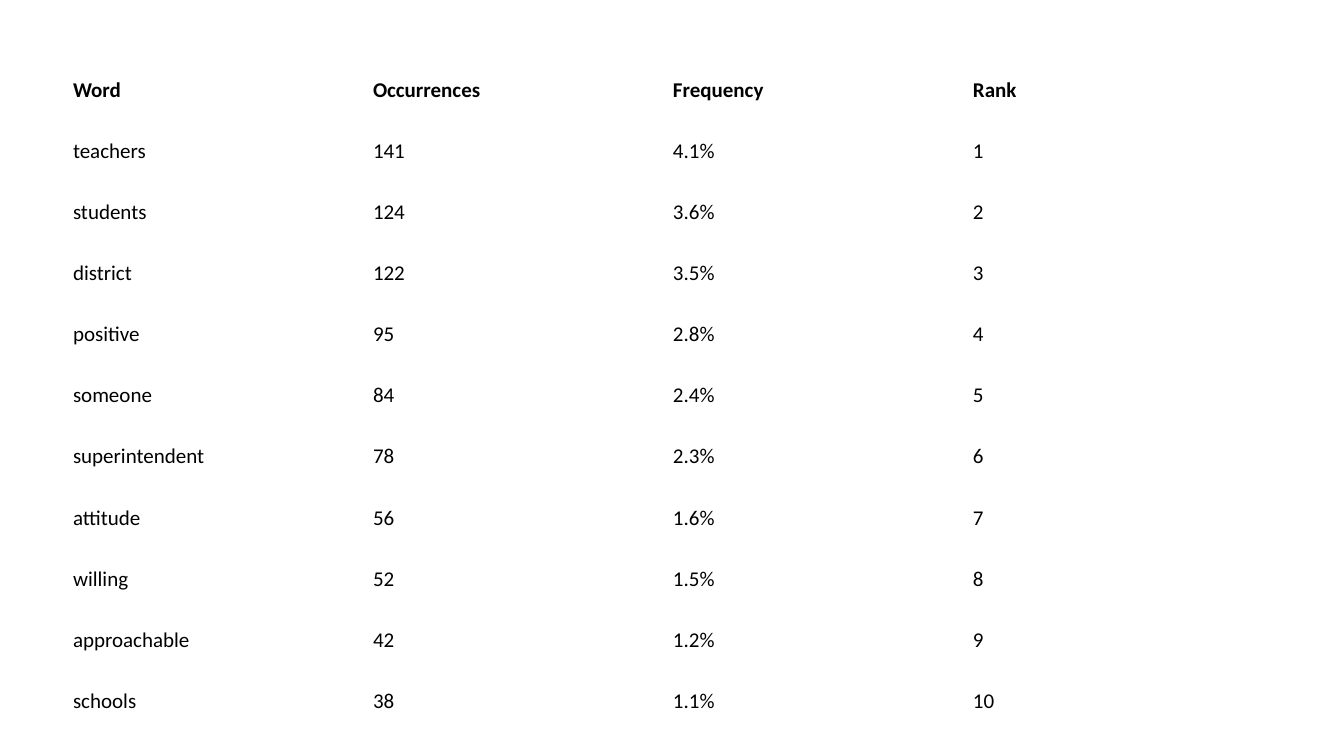
from typing import NamedTuple

import pptx
import pptx.dml.color
import pptx.enum.text
import pptx.table
import pptx.util
from pptx.util import Cm

COL_WIDTH = Cm(7.56)
ROW_HEIGHT = Cm(1.54)
INSET = Cm(0.24)
HEADERS = ("Word", "Occurrences", "Frequency", "Rank")


class WordCount(NamedTuple):
    word: str
    occurrences: int
    frequency: str


WORD_COUNTS = [
    WordCount("teachers", 141, "4.1%"),
    WordCount("students", 124, "3.6%"),
    WordCount("district", 122, "3.5%"),
    WordCount("positive", 95, "2.8%"),
    WordCount("someone", 84, "2.4%"),
    WordCount("superintendent", 78, "2.3%"),
    WordCount("attitude", 56, "1.6%"),
    WordCount("willing", 52, "1.5%"),
    WordCount("approachable", 42, "1.2%"),
    WordCount("schools", 38, "1.1%"),
]

CELL_FORMAT = {
    "vertical_anchor": pptx.enum.text.MSO_ANCHOR.MIDDLE,
    "margin_left": INSET,
    "margin_right": INSET,
    "margin_top": INSET,
    "margin_bottom": INSET,
}
FONT_FORMAT = {"name": "Calibri", "size": pptx.util.Pt(15)}


def set_attrs(target: object, values: dict) -> None:
    for name, value in values.items():
        setattr(target, name, value)


def rgb(hex_color: str) -> pptx.dml.color.RGBColor:
    return pptx.dml.color.RGBColor.from_string(hex_color)


def fill_cell(cell: pptx.table._Cell, text: str, bold: bool) -> None:
    set_attrs(cell, CELL_FORMAT)
    cell.fill.background()
    r = cell.text_frame.paragraphs[0].add_run()
    r.text = text
    set_attrs(r.font, FONT_FORMAT | {"bold": bold})
    r.font.color.rgb = rgb("000000")


def add_word_table(s: pptx.slide.Slide) -> None:
    rows = [HEADERS] + [(*count, rank) for rank, count in enumerate(WORD_COUNTS, 1)]
    table = s.shapes.add_table(
        len(rows), len(HEADERS), Cm(1.6), Cm(1.5),
        COL_WIDTH * len(HEADERS), ROW_HEIGHT * len(rows),
    ).table
    set_attrs(table, {"first_row": False, "horz_banding": False})
    for column in table.columns:
        column.width = COL_WIDTH
    for i, values in enumerate(rows):
        table.rows[i].height = ROW_HEIGHT
        for j, value in enumerate(values):
            fill_cell(table.cell(i, j), str(value), bold=i == 0)


def main() -> None:
    prs = pptx.Presentation()
    set_attrs(prs, {"slide_width": Cm(33.87), "slide_height": Cm(19.05)})
    s = prs.slides.add_slide(prs.slide_layouts.get_by_name("Blank"))
    add_word_table(s)
    prs.save("out.pptx")


if __name__ == "__main__":
    main()
